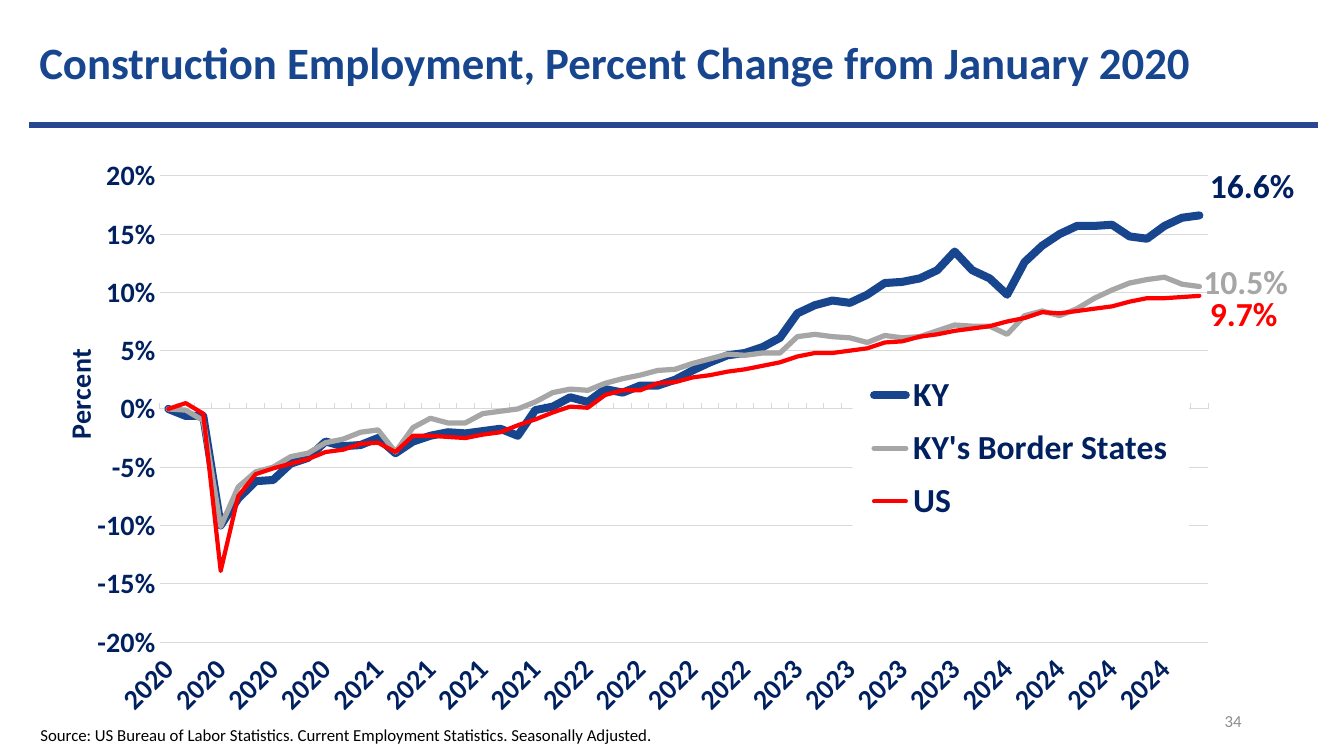
from lxml import etree
from pptx import Presentation
from pptx import util as u
from pptx.chart.data import CategoryChartData
from pptx.dml.color import RGBColor
from pptx.enum import chart as charts, shapes, text
from pptx.oxml import parse_xml
from pptx.oxml.ns import nsdecls, qn

PX = 9525  # EMU per px, 96 px to the inch
FONT = "Calibri"
BLUE = RGBColor(0x17, 0x46, 0x8E)
RULE_BLUE = RGBColor(0x28, 0x47, 0x90)
NAVY = RGBColor(0x00, 0x20, 0x60)
GREY = RGBColor(0xA6, 0xA6, 0xA6)
PALE = RGBColor(0xD9, 0xD9, 0xD9)
NUMBER_GREY = RGBColor(0x8C, 0x8C, 0x8C)
RED = RGBColor(0xFF, 0x00, 0x00)
BLACK = RGBColor(0x00, 0x00, 0x00)
WHITE = RGBColor(0xFF, 0xFF, 0xFF)

# Monthly change since January 2020, in tenths of a percent
KY = [0, -6, -6, -100, -77, -62, -61, -47, -42, -28, -32, -31,
      -25, -38, -28, -23, -20, -21, -19, -17, -23, -1, 2, 10,
      6, 17, 14, 20, 20, 25, 33, 40, 46, 48, 53, 61,
      82, 89, 93, 91, 98, 108, 109, 112, 119, 135, 119, 112,
      98, 126, 140, 150, 157, 157, 158, 148, 146, 157, 164, 166]
BORDER = [0, -1, -10, -101, -67, -54, -50, -41, -38, -29, -26, -20,
          -18, -37, -16, -8, -12, -12, -4, -2, 0, 6, 14, 17,
          16, 22, 26, 29, 33, 34, 39, 43, 47, 46, 48, 48,
          62, 64, 62, 61, 57, 63, 61, 62, 67, 72, 71, 71,
          64, 80, 84, 80, 86, 95, 102, 108, 111, 113, 107, 105]
US = [0, 5, -4, -139, -75, -56, -51, -47, -43, -37, -35, -30,
      -29, -37, -23, -23, -24, -25, -22, -20, -14, -9, -3, 2,
      1, 12, 16, 16, 22, 23, 27, 29, 32, 34, 37, 40,
      45, 48, 48, 50, 52, 57, 58, 62, 64, 67, 69, 71,
      75, 78, 83, 82, 84, 86, 88, 92, 95, 95, 96, 97]

# name, values, line colour, line width, label colour, label shift (x, y)
SERIES = [
    ("KY", KY, BLUE, 5.75, NAVY, (0.005, -0.05)),
    ("KY's Border States", BORDER, GREY, 3.75, GREY, (0, -0.005)),
    ("US", US, RED, 3, RED, (0.005, 0.035)),
]


def px(*lengths):
    return [length * PX for length in lengths]


def set_all(target, values):
    for name, value in values.items():
        setattr(target, name, value)


def set_font(font, size, colour, bold=False):
    set_all(font, {"name": FONT, "size": u.Pt(size), "bold": bold})
    font.color.rgb = colour


def set_line(line, colour, width):
    line.color.rgb = colour
    line.width = u.Pt(width)


def add_text(page, place, words, size, colour, bold=False, align=text.PP_ALIGN.LEFT, spacing=1.0):
    box = page.shapes.add_textbox(*px(*place))
    set_all(box.text_frame, {"word_wrap": True, "margin_top": 0, "margin_bottom": 0,
                             "vertical_anchor": text.MSO_ANCHOR.MIDDLE})
    para = box.text_frame.paragraphs[0]
    set_all(para, {"alignment": align, "line_spacing": spacing})
    span = para.add_run()
    span.text = words
    set_font(span.font, size, colour, bold)


def add_rule(page, left, top, right):
    rule = page.shapes.add_connector(shapes.MSO_CONNECTOR.STRAIGHT, *px(left, top, right, top))
    set_line(rule.line, RULE_BLUE, 4.5)
    etree.SubElement(rule._element.spPr, qn("a:effectLst"))


def set_layout(parent, values, after=None):
    """Place a chart part by hand, as fractions of the chart."""
    for old in parent.findall(qn("c:layout")):
        parent.remove(old)
    layout = parse_xml(f"<c:layout {nsdecls('c')}><c:manualLayout/></c:layout>")
    for tag, value in values.items():
        etree.SubElement(layout[0], qn(f"c:{tag}")).set("val", str(value))
    if after:
        parent.find(qn(after)).addnext(layout)
    else:
        parent.insert(0, layout)


def style_axes(chart):
    months, percent = chart.category_axis, chart.value_axis
    for axis in (months, percent):
        set_font(axis.tick_labels.font, 20, NAVY, True)
        axis.minor_tick_mark = charts.XL_TICK_MARK.NONE

    # Month axis: every third label, slanted, below the plot
    set_all(months, {"major_tick_mark": charts.XL_TICK_MARK.INSIDE,
                     "tick_label_position": charts.XL_TICK_LABEL_POSITION.LOW})
    set_line(months.format.line, PALE, 0.75)
    months._element.find(qn("c:txPr")).find(qn("a:bodyPr")).set("rot", "-2700000")
    skip = parse_xml(f"<c:tickLblSkip {nsdecls('c')} val='3'/>")
    months._element.find(qn("c:noMultiLvlLbl")).addprevious(skip)

    # Percent axis
    set_all(percent, {"minimum_scale": -0.2, "maximum_scale": 0.2, "major_unit": 0.05,
                      "major_tick_mark": charts.XL_TICK_MARK.NONE, "has_major_gridlines": True})
    set_all(percent.tick_labels, {"number_format": "0%", "number_format_is_linked": False})
    percent.format.line.fill.background()
    set_line(percent.major_gridlines.format.line, PALE, 0.75)
    para = percent.axis_title.text_frame.paragraphs[0]
    span = para.add_run()
    span.text = "Percent"
    set_font(span.font, 20, NAVY, True)
    set_layout(percent.axis_title._element,
               {"xMode": "edge", "yMode": "edge", "x": 0.02, "y": 0.335}, "c:tx")


def style_series(series, colour, width, label_colour, shift):
    series.smooth = False
    set_line(series.format.line, colour, width)
    for stroke in series._element.xpath("c:spPr/a:ln"):
        stroke.set("cap", "rnd")
        etree.SubElement(stroke, qn("a:round"))
    series.data_labels.show_value = False
    label = series.points[len(series.values) - 1].data_label
    set_font(label.font, 24, label_colour, True)
    label.position = charts.XL_LABEL_POSITION.RIGHT
    for element in series._element.xpath("c:dLbls/c:dLbl"):
        set_layout(element, dict(zip("xy", shift)), "c:idx")


def style_legend(chart):
    chart.has_legend = True
    set_all(chart.legend, {"position": charts.XL_LEGEND_POSITION.BOTTOM,
                           "include_in_layout": False})
    set_font(chart.legend.font, 24, NAVY, True)
    legend = chart.legend._element
    set_layout(legend, {"xMode": "edge", "yMode": "edge",
                        "x": 0.639, "y": 0.368, "w": 0.261, "h": 0.303}, "c:legendPos")
    legend.find(qn("c:overlay")).addnext(parse_xml(
        f"<c:spPr {nsdecls('c', 'a')}><a:solidFill><a:srgbClr val='{WHITE}'/></a:solidFill></c:spPr>"))


def add_employment_chart(page, place):
    figures = CategoryChartData(number_format="0.0%")
    figures.categories = [str(2020 + month // 12) for month in range(len(KY))]
    for name, tenths, *_ in SERIES:
        figures.add_series(name, [value / 1000 for value in tenths])
    chart = page.shapes.add_chart(charts.XL_CHART_TYPE.LINE, *px(*place), figures).chart
    chart.has_title = False
    set_font(chart.font, 20, NAVY, True)
    chart.plots[0].vary_by_categories = False
    style_axes(chart)
    for series, (_, _, *style) in zip(chart.plots[0].series, SERIES):
        style_series(series, *style)
    style_legend(chart)
    set_layout(chart.plots[0]._element.getparent(),
               {"layoutTarget": "inner", "xMode": "edge", "yMode": "edge",
                "x": 0.101, "y": 0.038, "w": 0.814, "h": 0.824})


def main():
    deck = Presentation()
    deck.slide_width, deck.slide_height = px(1280, 720)
    page = deck.slides.add_slide(deck.slide_layouts[6])

    # Heading
    add_text(page, (28, 36, 1227, 52), "Construction Employment, Percent Change from January 2020",
             32, BLUE, bold=True, spacing=0.9)
    add_rule(page, 28, 119, 1255)

    # Chart
    add_employment_chart(page, (28, 147, 1227, 539))

    # Footer
    add_text(page, (904, 667, 288, 38), "34", 12, NUMBER_GREY, align=text.PP_ALIGN.RIGHT)
    add_text(page, (29, 685, 974, 29), "Source: US Bureau of Labor Statistics. "
             "Current Employment Statistics. Seasonally Adjusted.", 12, BLACK)

    deck.save("out.pptx")


if __name__ == "__main__":
    main()
